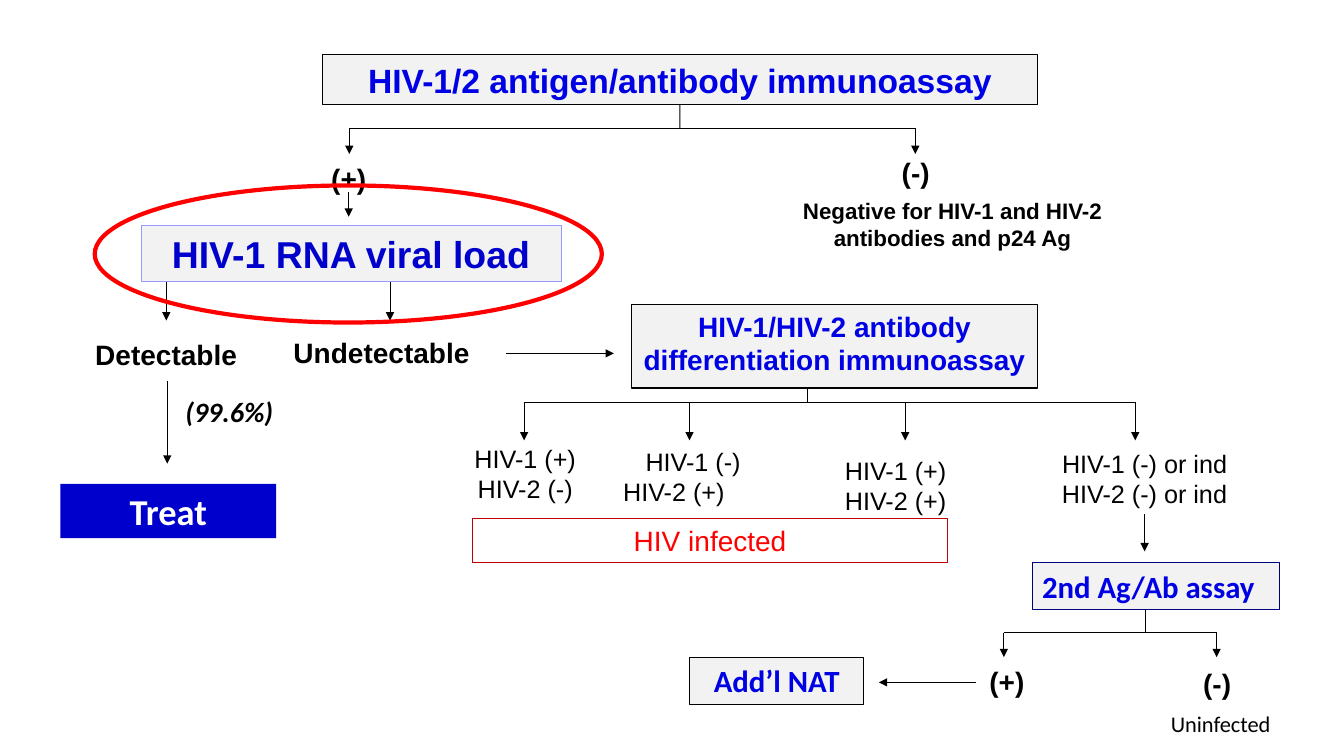
from dataclasses import dataclass

from lxml import etree
from pptx import Presentation
from pptx.dml.color import RGBColor
from pptx.enum.shapes import MSO_CONNECTOR, MSO_SHAPE
from pptx.enum.text import MSO_ANCHOR, PP_ALIGN
from pptx.oxml.ns import qn
from pptx.util import Pt

STRAIGHT = MSO_CONNECTOR.STRAIGHT
RECTANGLE, OVAL = MSO_SHAPE.RECTANGLE, MSO_SHAPE.OVAL
TOP = MSO_ANCHOR.TOP
LEFT, CENTER = PP_ALIGN.LEFT, PP_ALIGN.CENTER
BOTTOM_SIDE = 2

BLACK, WHITE, RED = "000000", "FFFFFF", "FF0000"
GREY, BLUE, DARK_BLUE = "F2F2F2", "0000E4", "0000CC"


@dataclass(frozen=True)
class Node:
    text: str
    left: float
    top: float
    width: float
    height: float
    size: float = 20
    color: str = BLACK
    bold: bool = True
    italic: bool = False
    font: str = "Arial"
    align: PP_ALIGN = CENTER
    fill: str | None = None
    line: str | None = None
    inset: float = 6.6
    first_line_indent: float = 0


@dataclass(frozen=True)
class Fork:
    """A stem that ends on a horizontal bar with arrows dropping from it."""
    stem_x: float
    stem_top: float
    bar_y: float
    drop_xs: tuple[float, ...]
    drop_bottom: float
    parent: str | None = None


@dataclass(frozen=True)
class Arrow:
    start: tuple[float, float]
    end: tuple[float, float]
    parent: str | None = None


NODES = {
    # Tests and outcomes in boxes
    "screening": Node("HIV-1/2 antigen/antibody immunoassay", 230.4, 39, 510.5, 36,
                      size=24, color=BLUE, fill=GREY, line=BLACK),
    "differentiation": Node("HIV-1/HIV-2 antibody differentiation immunoassay",
                            451.4, 217.4, 289.5, 59.8,
                            color=BLUE, fill=GREY, line=BLACK),
    "viral load": Node("HIV-1 RNA viral load", 100.8, 161.3, 300.2, 39.6,
                       size=26.7, color=DARK_BLUE, fill=GREY, line="9999FF"),
    "treat": Node("Treat", 43.2, 345.6, 154.1, 38.9, size=26, color=WHITE,
                  font="Calibri", fill=DARK_BLUE),
    "second assay": Node("2nd Ag/Ab assay", 737.3, 401.8, 176.4, 33.8, size=22,
                         color=BLUE, font="Calibri", align=LEFT, fill=GREY,
                         line="00007D", inset=7.2),
    "nat": Node("Add’l NAT", 492.5, 469.4, 124.6, 33.8, size=22, color=BLUE,
                font="Calibri", fill=GREY, line=BLACK),
    "infected": Node("HIV infected", 337.7, 370.1, 339.1, 31.7, color=RED,
                     bold=False, line="C00000"),
    # Screening results
    "screening positive": Node("(+)", 214.6, 111.6, 69.1, 31),
    "screening negative": Node("(-)", 627.8, 107.3, 52.6, 31),
    "negative meaning": Node("Negative for HIV-1 and HIV-2 antibodies and p24 Ag",
                             532.1, 137.5, 296.6, 46.1, size=16, inset=7.2),
    # Viral load results
    "detectable": Node("Detectable", 59, 237.6, 119.5, 31),
    "undetectable": Node("Undetectable", 197.3, 236.2, 150.5, 31),
    "share": Node("(99.6%)", 125.3, 278.6, 83.5, 31.7, italic=True,
                  font="Calibri", align=LEFT, inset=7.2),
    # Differentiation results
    "hiv-1 only": Node("HIV-1 (+) HIV-2 (-)", 326.2, 313.2, 97.9, 50.4,
                       size=18, bold=False),
    "hiv-2 only": Node("HIV-1 (-) HIV-2 (+)", 438.5, 315.4, 114.5, 50.4,
                       size=18, bold=False, align=LEFT, first_line_indent=16),
    "both": Node("HIV-1 (+) HIV-2 (+)", 582.5, 321.8, 114.5, 50.4,
                 size=18, bold=False),
    "neither": Node("HIV-1 (-) or ind HIV-2 (-) or ind", 733.7, 316.8, 167.8, 50.4,
                    size=18, bold=False),
    # Second assay results
    "second positive": Node("(+)", 684.7, 470.9, 69.1, 31),
    "second negative": Node("(-)", 843.1, 472.3, 52.6, 31),
    "uninfected": Node("Uninfected", 823.7, 504, 96.5, 26.6, size=16, bold=False,
                       font="Calibri"),
}

FORKS = [
    Fork(485.6, 75, 91.5, (249.5, 653.8), 110, parent="screening"),
    Fork(576.7, 277.2, 287.3, (374.4, 492.5, 646.6, 810.9), 314.6),
    Fork(817.9, 435.6, 451.8, (717.1, 869), 469.4),
]

ARROWS = [
    Arrow((249.1, 137.5), (249.1, 154.8)),
    Arrow((118.8, 201.6), (118.8, 229)),
    Arrow((278.6, 201.6), (278.6, 229)),
    Arrow((119.5, 272.2), (119.5, 331.2)),
    Arrow((361.4, 252.4), (438.5, 252.4)),
    Arrow((817.6, 367.2), (817.6, 393.8), parent="neither"),
    Arrow((697, 487.4), (627.8, 487.4)),
]


def rgb(color: str) -> RGBColor:
    return RGBColor.from_string(color)


def paint(shape, fill: str | None, line: str | None, weight: float = 0.75) -> None:
    shape.shadow.inherit = False
    if fill:
        shape.fill.solid()
        shape.fill.fore_color.rgb = rgb(fill)
    else:
        shape.fill.background()
    if line:
        shape.line.color.rgb = rgb(line)
        shape.line.width = Pt(weight)
    else:
        shape.line.fill.background()


def draw_node(slide, node: Node):
    bounds = [Pt(length) for length in (node.left, node.top, node.width, node.height)]
    if node.fill or node.line:
        shape = slide.shapes.add_shape(RECTANGLE, *bounds)
        paint(shape, node.fill, node.line)
    else:
        shape = slide.shapes.add_textbox(*bounds)
    frame = shape.text_frame
    frame.word_wrap = True
    frame.vertical_anchor = TOP
    frame.margin_left = frame.margin_right = Pt(node.inset)
    frame.margin_top = frame.margin_bottom = Pt(3.6)
    paragraph = frame.paragraphs[0]
    paragraph.alignment = node.align
    if node.first_line_indent:
        properties = paragraph._p.get_or_add_pPr()
        properties.set("marL", "0")
        properties.set("indent", str(Pt(node.first_line_indent)))
    run = paragraph.add_run()
    run.text = node.text
    run.font.name = node.font
    run.font.size = Pt(node.size)
    run.font.bold = node.bold
    run.font.italic = node.italic
    run.font.color.rgb = rgb(node.color)
    return shape


def draw_line(slide, start: tuple[float, float], end: tuple[float, float],
              arrow: bool = False, parent=None) -> None:
    connector = slide.shapes.add_connector(
        STRAIGHT, *(Pt(length) for length in (*start, *end)))
    if parent is not None:
        connector.begin_connect(parent, BOTTOM_SIDE)
    connector.line.color.rgb = rgb(BLACK)
    connector.line.width = Pt(0.75)
    if arrow:
        outline = connector.line._get_or_add_ln()
        etree.SubElement(outline, qn("a:tailEnd"), type="triangle")
    etree.SubElement(connector._element.spPr, qn("a:effectLst"))


def draw_fork(slide, fork: Fork, shapes: dict) -> None:
    draw_line(slide, (fork.stem_x, fork.stem_top), (fork.stem_x, fork.bar_y),
              parent=shapes.get(fork.parent))
    draw_line(slide, (fork.drop_xs[0], fork.bar_y), (fork.drop_xs[-1], fork.bar_y))
    for x in fork.drop_xs:
        draw_line(slide, (x, fork.bar_y), (x, fork.drop_bottom), arrow=True)


def main() -> None:
    presentation = Presentation()
    presentation.slide_width, presentation.slide_height = Pt(960), Pt(540)
    slide = presentation.slides.add_slide(presentation.slide_layouts[6])

    # Tests and results
    shapes = {name: draw_node(slide, node) for name, node in NODES.items()}

    # Paths between them
    for fork in FORKS:
        draw_fork(slide, fork, shapes)
    for arrow in ARROWS:
        draw_line(slide, arrow.start, arrow.end, True, shapes.get(arrow.parent))

    # Highlight around the viral load test
    highlight = slide.shapes.add_shape(OVAL, Pt(67.7), Pt(132.5), Pt(362.2), Pt(97.9))
    paint(highlight, None, RED, weight=3)

    presentation.save("out.pptx")


if __name__ == "__main__":
    main()
